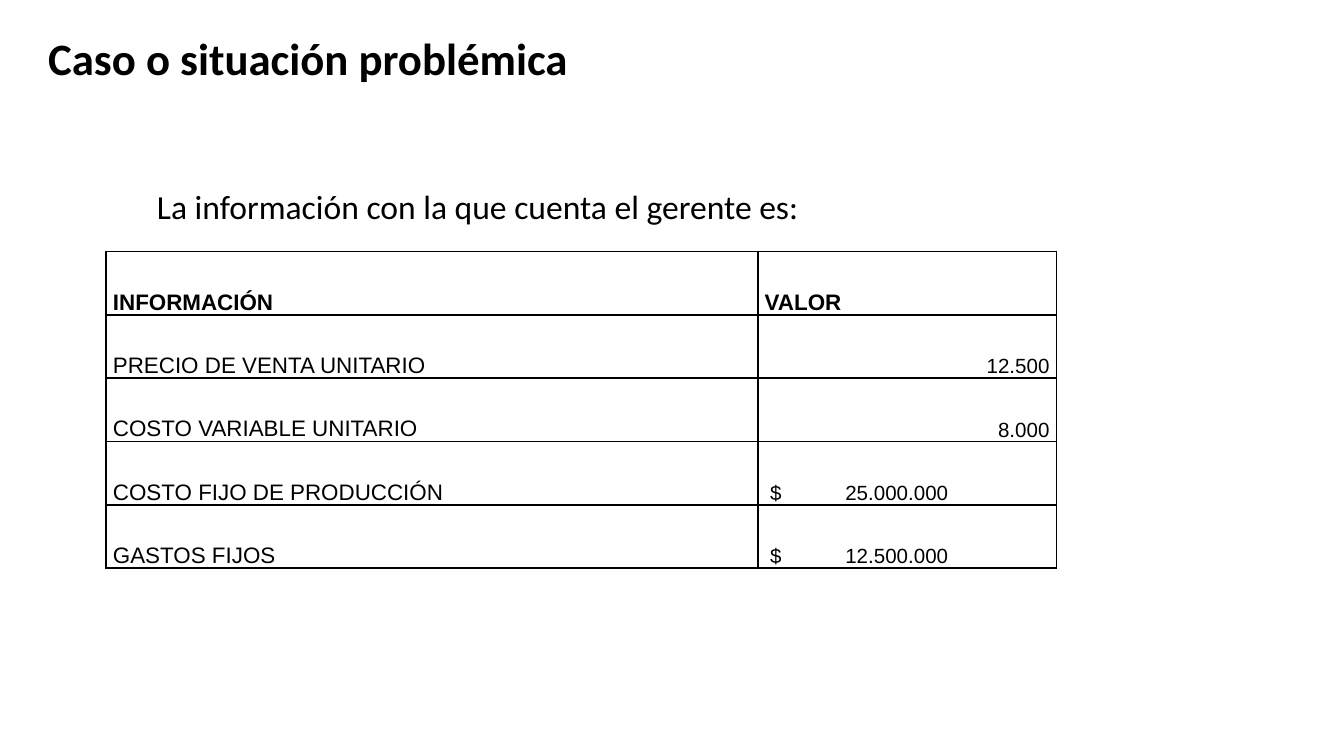
from pptx import Presentation
from pptx.dml.color import RGBColor
from pptx.enum.text import MSO_ANCHOR as Anchor, MSO_AUTO_SIZE as AutoSize, PP_ALIGN as Align
from pptx.oxml.ns import qn
from pptx.util import Inches, Pt
from lxml.etree import SubElement

BLACK = RGBColor(0, 0, 0)
WIDTH = 10
HEIGHT = WIDTH * 9 / 16
TITLE_BOX = (0.26, 0.18, 5.05, 0.5)
INTRO_BOX = (1.07, 1.29, 5.04, 0.45)
TABLE_BOX = (0.79, 1.87, 7.07, 2.36)
LABEL_SHARE = 4.85 / 7.07
LINE_SPACING = 1.15
CELL_INSET = 0.05
MONEY_INSET = 0.09
MONEY_TAB = 0.56

ROWS = [
    ("INFORMACIÓN", "VALOR"),
    ("PRECIO DE VENTA UNITARIO", "12.500"),
    ("COSTO VARIABLE UNITARIO", "8.000"),
    ("COSTO FIJO DE PRODUCCIÓN", "$\t25.000.000"),
    ("GASTOS FIJOS", "$\t12.500.000"),
]


def style_font(para, name, size, bold=False):
    """Format every run of a paragraph."""
    for span in para.runs:
        span.font.name = name
        span.font.size = Pt(size)
        span.font.bold = bold
        span.font.color.rgb = BLACK


def add_text(page, box, text, size, bold=False, wrap=True):
    """Place one line of Calibri text in a box and return its paragraph."""
    frame = page.shapes.add_textbox(*map(Inches, box)).text_frame
    frame.word_wrap = wrap
    frame.auto_size = AutoSize.SHAPE_TO_FIT_TEXT
    frame.text = text
    para = frame.paragraphs[0]
    style_font(para, "Calibri", size, bold)
    return para


def add_intro(page, box):
    """Place the sentence that introduces the table."""
    para = add_text(page, box, "La información con la que cuenta el gerente es:", 18, wrap=False)
    para.alignment = Align.JUSTIFY
    para.line_spacing = LINE_SPACING
    para.space_after = Pt(12)


def add_borders(cell):
    """Draw a thin black line on the four sides of a cell."""
    properties = cell._tc.get_or_add_tcPr()
    for position, side in enumerate(("lnL", "lnR", "lnT", "lnB")):
        line = properties.makeelement(qn(f"a:{side}"), {"w": str(Pt(1))})
        fill = SubElement(line, qn("a:solidFill"))
        SubElement(fill, qn("a:srgbClr"), val=str(BLACK))
        properties.insert(position, line)


def add_money_tab(para):
    """Set the tab stop between the currency sign and the amount."""
    tabs = SubElement(para._p.get_or_add_pPr(), qn("a:tabLst"))
    SubElement(tabs, qn("a:tab"), pos=str(Inches(MONEY_TAB)), algn="l")


def fill_cell(cell, text, is_header, is_value):
    """Write and format one table cell."""
    is_money = "\t" in text
    is_amount = is_value and not is_header
    cell.text = text
    cell.fill.background()
    cell.vertical_anchor = Anchor.BOTTOM
    cell.margin_left = Inches(MONEY_INSET if is_money else CELL_INSET)
    cell.margin_right = Inches(CELL_INSET)
    cell.margin_top = cell.margin_bottom = 0
    para = cell.text_frame.paragraphs[0]
    para.line_spacing = LINE_SPACING
    if is_money:
        add_money_tab(para)
    elif is_amount:
        para.alignment = Align.RIGHT
    style_font(para, "Arial", 11 if is_amount else 12, is_header)
    add_borders(cell)


def add_value_table(page, box):
    """Place the table of prices and costs in a box."""
    left, top, width, height = map(Inches, box)
    table = page.shapes.add_table(len(ROWS), 2, left, top, width, height).table
    table.horz_banding = False
    table.first_row = False
    table.columns[0].width = int(width * LABEL_SHARE)
    table.columns[1].width = width - table.columns[0].width
    for row, texts in enumerate(ROWS):
        for column, text in enumerate(texts):
            fill_cell(table.cell(row, column), text, row == 0, column == 1)


def main():
    """Build the slide and save the deck."""
    deck = Presentation()
    deck.slide_width, deck.slide_height = Inches(WIDTH), Inches(HEIGHT)
    page = deck.slides.add_slide(deck.slide_layouts[6])
    add_text(page, TITLE_BOX, "Caso o situación problémica", 24, bold=True)
    add_intro(page, INTRO_BOX)
    add_value_table(page, TABLE_BOX)
    deck.save("out.pptx")


if __name__ == "__main__":
    main()
